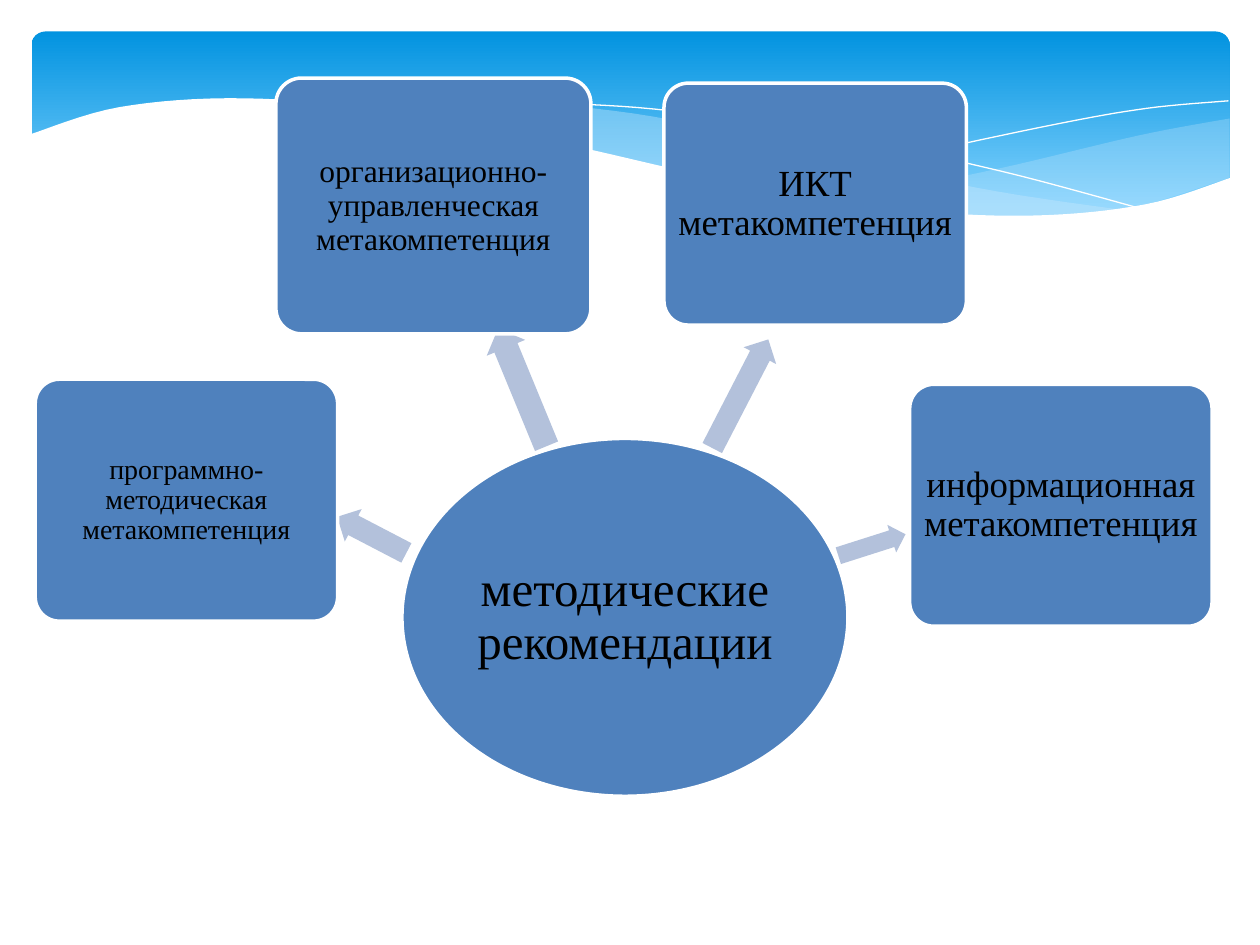
"""Build a slide of four metacompetences around methodical recommendations."""
from lxml import etree
from pptx import Presentation
from pptx.dml.color import RGBColor
from pptx.enum import shapes, text
from pptx.oxml.ns import qn
from pptx.util import Inches, Pt

WHITE = RGBColor(0xFF, 0xFF, 0xFF)
BLACK = RGBColor(0x00, 0x00, 0x00)
BLUE = RGBColor(0x4F, 0x81, 0xBD)
PALE_BLUE = RGBColor(0xB3, 0xC1, 0xDB)
SKY_TOP = RGBColor(0x02, 0x93, 0xE0)
SKY_BOTTOM = RGBColor(0x83, 0xD3, 0xFE)
MIST = RGBColor(0xC6, 0xE7, 0xFC)
KIND = shapes.MSO_SHAPE
CURVE_STEPS = 8
FONT = "Times New Roman"


def build_curve(anchors, closed):
    """Draw a Catmull-Rom curve through the anchors."""
    padded = [anchors[0], *anchors, anchors[-1]]
    points = [anchors[0]]
    for a, b, c, d in zip(padded, padded[1:], padded[2:], padded[3:]):
        for step in range(1, CURVE_STEPS + 1):
            t = step / CURVE_STEPS
            points.append(tuple(
                (2 * q + (r - p) * t + (2 * p - 5 * q + 4 * r - s) * t ** 2
                 + (3 * q - p - 3 * r + s) * t ** 3) / 2
                for p, q, r, s in zip(a, b, c, d)))
    start, *rest = [(Inches(x), Inches(y)) for x, y in points]
    builder = page.shapes.build_freeform(*start)
    builder.add_line_segments(rest, close=closed)
    return builder.convert_to_shape()


def paint(shape, fill=None, line=None, width=0):
    """Set flat fill and line, leaving out whichever has no colour."""
    shape.shadow.inherit = False
    for part, color in ((shape.fill, fill), (shape.line.fill, line)):
        if color is None:
            part.background()
        else:
            part.solid()
            part.fore_color.rgb = color
    if line is not None:
        shape.line.width = Pt(width)


deck = Presentation()
deck.slide_width, deck.slide_height = Inches(10), Inches(7.5)
page = deck.slides.add_slide(deck.slide_layouts[6])

sky = page.shapes.add_shape(
    KIND.ROUNDED_RECTANGLE, Inches(0.25), Inches(0.25), Inches(9.51), Inches(1.56))
paint(sky)
sky.adjustments[0] = 0.071
sky.fill.gradient()
sky.fill.gradient_angle = 270
for stop, color, position in zip(sky.fill.gradient_stops, (SKY_TOP, SKY_BOTTOM), (0, 0.9)):
    stop.color.rgb = color
    stop.position = position

right_wave = [
    (9.76, 0.94), (9.06, 1.07), (8.05, 1.31), (7.29, 1.47), (6.61, 1.6), (6.61, 1.6),
    (7.32, 1.68), (8.14, 1.72), (8.97, 1.65), (9.76, 1.41)]
middle_wave = [
    (8.93, 1.67), (7.75, 1.49), (6.29, 1.16), (5.02, 0.9), (3.8, 0.8), (2.86, 0.86),
    (2.86, 0.86), (3.62, 0.97), (4.49, 1.16), (5.66, 1.43), (6.95, 1.65), (8.07, 1.73),
    (8.93, 1.67)]
for anchors, opacity in ((right_wave, 29), (middle_wave, 40)):
    wave = build_curve(anchors, closed=True)
    paint(wave, fill=MIST)
    tint = wave.element.spPr.find(qn("a:solidFill"))[0]
    etree.SubElement(tint, qn("a:alpha")).set("val", str(opacity * 1000))

falling_line = [
    (3.09, 0.9), (3.53, 0.84), (4.33, 0.82), (5.33, 0.88), (6.65, 1.08), (7.95, 1.36),
    (9.07, 1.66)]
rising_line = [(6.13, 1.51), (7.2, 1.24), (8.36, 0.99), (9.1, 0.86), (9.75, 0.8)]
for anchors in (falling_line, rising_line):
    paint(build_curve(anchors, closed=False), line=WHITE)

white_crest = [
    (9.77, 1.41), (9.1, 1.62), (8.23, 1.71), (7.26, 1.67), (6.03, 1.49), (4.47, 1.14),
    (3.16, 0.88), (1.93, 0.78), (0.95, 0.85), (0.23, 1.07)]
lower_corners = [(0.23, 1.07), (0.23, 2.24), (0.23, 2.24), (9.77, 2.24), (9.77, 2.24)]
paint(build_curve(white_crest + lower_corners, closed=True), fill=WHITE)

arrows = {
    "программно": ((2.64, 4.1, 0.62, 0.29), 27.5),
    "организационно": ((3.64, 2.91, 1.01, 0.33), 67.6),
    "ИКТ": ((5.39, 2.98, 0.97, 0.29), 117.3),
    "информационная": ((6.64, 4.21, 0.56, 0.23), 162.3),
}
for place, angle in arrows.values():
    arrow = page.shapes.add_shape(KIND.LEFT_ARROW, *map(Inches, place))
    paint(arrow, fill=PALE_BLUE)
    arrow.rotation = angle
    arrow.adjustments[0] = 0.6

nodes = [
    (KIND.OVAL, (3.19, 3.48, 3.54, 2.84), "методические рекомендации", 28, 0.02),
    (KIND.ROUNDED_RECTANGLE, (0.28, 3.01, 2.4, 1.92),
     "программно-методическая метакомпетенция", 16, 0.03),
    (KIND.ROUNDED_RECTANGLE, (2.19, 0.62, 2.5, 2.03),
     "организационно-управленческая метакомпетенция", 18, 0.04),
    (KIND.ROUNDED_RECTANGLE, (5.27, 0.66, 2.4, 1.92), "ИКТ метакомпетенция", 21, 0.04),
    (KIND.ROUNDED_RECTANGLE, (7.22, 3.05, 2.4, 1.92),
     "информационная метакомпетенция", 21, 0.04),
]
for kind, place, label, size, inset in nodes:
    node = page.shapes.add_shape(kind, *map(Inches, place))
    paint(node, fill=BLUE, line=WHITE, width=2)
    if kind == KIND.ROUNDED_RECTANGLE:
        node.adjustments[0] = 0.1
    frame = node.text_frame
    frame.word_wrap = True
    frame.vertical_anchor = text.MSO_ANCHOR.MIDDLE
    frame.margin_left = frame.margin_right = Inches(inset)
    frame.margin_top = frame.margin_bottom = Inches(inset)
    para = frame.paragraphs[0]
    para.text = label
    para.alignment = text.PP_ALIGN.CENTER
    para.line_spacing = 0.9
    para.font.name = FONT
    para.font.size = Pt(size)
    para.font.color.rgb = BLACK

deck.save("out.pptx")
